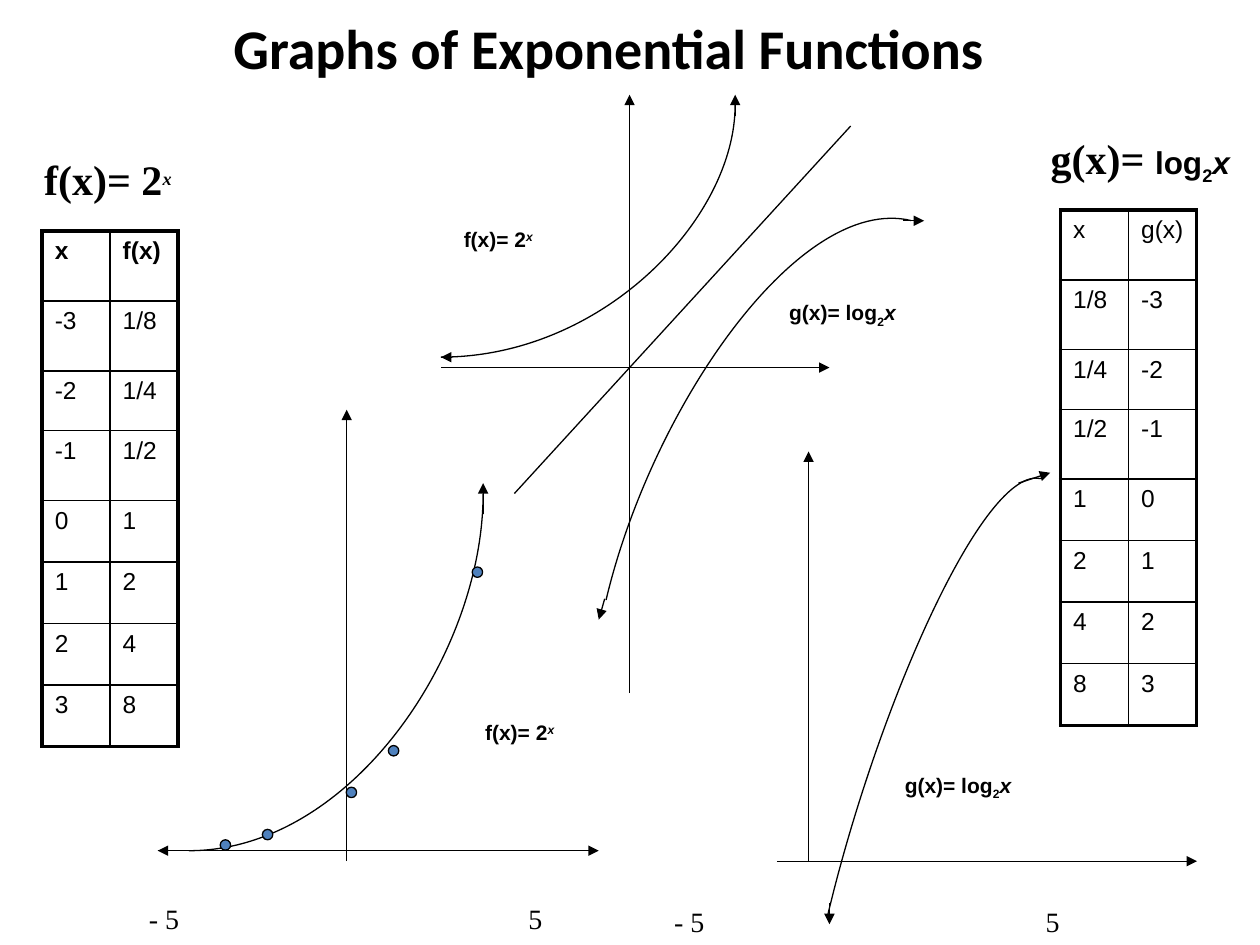
from dataclasses import dataclass, field
from itertools import product
from typing import NamedTuple

from lxml.etree import SubElement
from pptx import Presentation
from pptx.dml.color import RGBColor as Rgb
from pptx.enum.shapes import MSO_CONNECTOR as Connector, MSO_SHAPE as Preset
from pptx.enum.text import MSO_ANCHOR as Anchor, MSO_AUTO_SIZE as AutoSize, PP_ALIGN as Align
from pptx.oxml.ns import qn
from pptx.util import Cm, Pt


class Theme:
    ink = Rgb(0x00, 0x00, 0x00)
    dot = Rgb(0x4F, 0x81, 0xBD)
    line = Pt(0.75)
    inner_border = Pt(1)
    outer_border = Pt(2.25)
    title = dict(name="Calibri", size=Pt(32), bold=True)
    heading = dict(name="Times New Roman", size=Pt(24), bold=True)
    heading_power = dict(heading, size=Pt(18), italic=True)
    heading_log = dict(name="Arial", size=Pt(18), bold=True)
    label = dict(name="Arial", size=Pt(12), bold=True)
    tick = dict(name="Times New Roman", size=Pt(16))
    cell = dict(name="Arial", size=Pt(14), bold=False)


class Point(NamedTuple):
    x: float
    y: float


class Span(NamedTuple):
    text: str
    style: dict
    baseline: int = 0


@dataclass
class Label:
    left: float
    top: float
    width: float
    height: float
    spans: list[Span]
    frame: dict = field(default_factory=lambda: dict(word_wrap=False, auto_size=AutoSize.SHAPE_TO_FIT_TEXT))
    align: Align = Align.LEFT
    tab: float = 0


@dataclass
class Line:
    start: Point
    end: Point
    arrow: bool = True


@dataclass
class QuarterArc:
    left: float
    top: float
    width: float
    height: float
    rotation: float = 0


@dataclass
class ValueTable:
    left: float
    top: float
    rows: list[tuple[str, str]]
    bold_header: bool


def log_spans(style: dict, word: str) -> list[Span]:
    return [Span(word, style), Span("2", style, -25000), Span("x", dict(style, italic=True))]


POWER = [Span("f(x)= 2", Theme.label), Span("x", dict(Theme.label, italic=True), 30000)]
LOG = log_spans(Theme.label, "g(x)= log")
TICKS = [Span("- 5\t5", Theme.tick)]
TICK_FRAME = dict(word_wrap=True, auto_size=AutoSize.SHAPE_TO_FIT_TEXT)
TITLE = Label(1.48, 0, 21.59, 1.91, [Span("Graphs of Exponential Functions", Theme.title)],
              dict(word_wrap=True, vertical_anchor=Anchor.MIDDLE), Align.CENTER)
LABELS = [
    Label(2.75, 18.05, 9.53, 0.94, TICKS, TICK_FRAME, tab=7.65),
    Label(13.34, 18.1, 11, 0.94, TICKS, TICK_FRAME, tab=7.49),
    Label(0.64, 2.96, 3.1, 1.27,
          [Span("f(x)= 2", Theme.heading), Span("x", Theme.heading_power, 30000)]),
    Label(20.93, 2.54, 4.17, 1.27,
          [Span("g(x)= ", Theme.heading), *log_spans(Theme.heading_log, "log")]),
    Label(15.66, 5.92, 2.69, 0.76, LOG),
    Label(9.1, 4.45, 1.93, 0.76, POWER),
    Label(9.53, 14.38, 1.93, 0.76, POWER),
    Label(17.99, 15.45, 2.69, 0.76, LOG),
]
AXES = [
    Line(Point(3.18, 17.15), Point(12.07, 17.15)),
    Line(Point(15.66, 17.36), Point(24.13, 17.36)),
    Line(Point(16.3, 17.36), Point(16.3, 9.1)),
    Line(Point(6.99, 17.36), Point(6.99, 8.26)),
    Line(Point(8.89, 7.41), Point(16.72, 7.41)),
    Line(Point(12.69, 13.97), Point(12.69, 1.91)),
]
MIRROR = Line(Point(10.37, 9.95), Point(17.15, 2.54), arrow=False)
CURVE_TIPS = [
    Line(Point(4.23, 17.15), Point(3.18, 17.15)),
    Line(Point(9.74, 10.37), Point(9.74, 9.74)),
    Line(Point(16.72, 18.2), Point(16.72, 18.63)),
    Line(Point(20.53, 9.74), Point(21.17, 9.53)),
    Line(Point(12.19, 12.07), Point(12.07, 12.49)),
    Line(Point(18.2, 4.45), Point(18.63, 4.45)),
    Line(Point(9.1, 7.2), Point(8.89, 7.2)),
    Line(Point(14.82, 2.33), Point(14.82, 1.91)),
]
ARCS = [
    QuarterArc(3.81, 9.95, 5.93, 7.2),
    QuarterArc(8.89, 2.12, 5.93, 5.08),
    QuarterArc(13.18, 3.84, 4.22, 8.86, 193.3),
    QuarterArc(17.75, 9.27, 2.16, 9.6, 193.3),
]
ARC_PULL = 0.55
DOTS = [Point(4.44, 16.93), Point(5.29, 16.72), Point(6.98, 15.87), Point(7.83, 15.03), Point(9.52, 11.43)]
DOT_SIZE = 0.21

INPUTS = ["-3", "-2", "-1", "0", "1", "2", "3"]
POWERS = ["1/8", "1/4", "1/2", "1", "2", "4", "8"]
TABLES = [
    ValueTable(0.85, 4.66, [("x", "f(x)"), *zip(INPUTS, POWERS)], True),
    ValueTable(21.38, 4.23, [("x", "g(x)"), *zip(POWERS, INPUTS)], False),
]
COLUMN_WIDTH = 1.37
ROW_HEIGHTS = [1.41, 1.41, 1.2, 1.41, 1.24, 1.24, 1.24, 1.24]


def apply(target, values: dict) -> None:
    for name, value in values.items():
        setattr(target, name, value)


def add_span(para, span: Span) -> None:
    run = para.add_run()
    run.text = span.text
    apply(run.font, span.style)
    run.font.color.rgb = Theme.ink
    if span.baseline:
        run.font._element.set("baseline", str(span.baseline))


def draw_label(page, label: Label) -> None:
    box = page.shapes.add_textbox(Cm(label.left), Cm(label.top), Cm(label.width), Cm(label.height))
    apply(box.text_frame, label.frame)
    para = box.text_frame.paragraphs[0]
    para.alignment = label.align
    if label.tab:
        stops = SubElement(para._p.get_or_add_pPr(), qn("a:tabLst"))
        SubElement(stops, qn("a:tab"), pos=str(Cm(label.tab)), algn="l")
    for span in label.spans:
        add_span(para, span)


def ink_line(shape) -> None:
    shape.line.color.rgb = Theme.ink
    shape.line.width = Theme.line


def draw_line(page, line: Line) -> None:
    connector = page.shapes.add_connector(Connector.STRAIGHT, *map(Cm, line.start + line.end))
    ink_line(connector)
    if line.arrow:
        SubElement(connector.line._get_or_add_ln(), qn("a:tailEnd"), type="triangle")
    SubElement(connector._element.spPr, qn("a:effectLst"))


def draw_arc(page, arc: QuarterArc) -> None:
    corners = [(0, 1), (ARC_PULL, 1), (1, 1 - ARC_PULL), (1, 0)]
    points = [(Cm(arc.left + arc.width * x), Cm(arc.top + arc.height * y)) for x, y in corners]
    builder = page.shapes.build_freeform(*points[0])
    builder.add_line_segments(points[1:], close=False)
    outline = builder.convert_to_shape()
    segments = list(outline._element.iter(qn("a:lnTo")))
    bezier = SubElement(segments[0].getparent(), qn("a:cubicBezTo"))
    for segment in segments:
        bezier.append(segment[0])
        segment.getparent().remove(segment)
    outline.rotation = arc.rotation
    outline.shadow.inherit = False
    outline.fill.background()
    ink_line(outline)


def draw_dot(page, corner: Point) -> None:
    dot = page.shapes.add_shape(Preset.OVAL, *map(Cm, (*corner, DOT_SIZE, DOT_SIZE)))
    dot.shadow.inherit = False
    dot.fill.solid()
    dot.fill.fore_color.rgb = Theme.dot
    ink_line(dot)


def set_borders(cell, outer_sides: dict[str, bool]) -> None:
    properties = cell._tc.get_or_add_tcPr()
    for side, outer in outer_sides.items():
        width = Theme.outer_border if outer else Theme.inner_border
        border = SubElement(properties, qn(f"a:{side}"), w=str(width))
        SubElement(SubElement(border, qn("a:solidFill")), qn("a:srgbClr"), val=str(Theme.ink))


def draw_table(page, values: ValueTable) -> None:
    size = len(values.rows), len(values.rows[0])
    table = page.shapes.add_table(*size, Cm(values.left), Cm(values.top),
                                  Cm(COLUMN_WIDTH * size[1]), Cm(sum(ROW_HEIGHTS))).table
    apply(table, dict(first_row=False, horz_banding=False))
    for column in table.columns:
        column.width = Cm(COLUMN_WIDTH)
    for row, height in zip(table.rows, ROW_HEIGHTS):
        row.height = Cm(height)
    for r, c in product(*map(range, size)):
        cell = table.cell(r, c)
        style = dict(Theme.cell, bold=values.bold_header and r == 0)
        add_span(cell.text_frame.paragraphs[0], Span(values.rows[r][c], style))
        set_borders(cell, dict(lnL=c == 0, lnR=c == size[1] - 1, lnT=r == 0, lnB=r == size[0] - 1))
        cell.fill.background()


def main() -> None:
    deck = Presentation()
    apply(deck, dict(slide_width=Cm(25.4), slide_height=Cm(19.05)))
    page = deck.slides.add_slide(deck.slide_layouts[6])
    for draw, items in ((draw_label, [TITLE]), (draw_line, [*AXES, MIRROR]), (draw_arc, ARCS),
                        (draw_table, TABLES), (draw_label, LABELS), (draw_line, CURVE_TIPS),
                        (draw_dot, DOTS)):
        for item in items:
            draw(page, item)
    deck.save("out.pptx")


if __name__ == "__main__":
    main()
